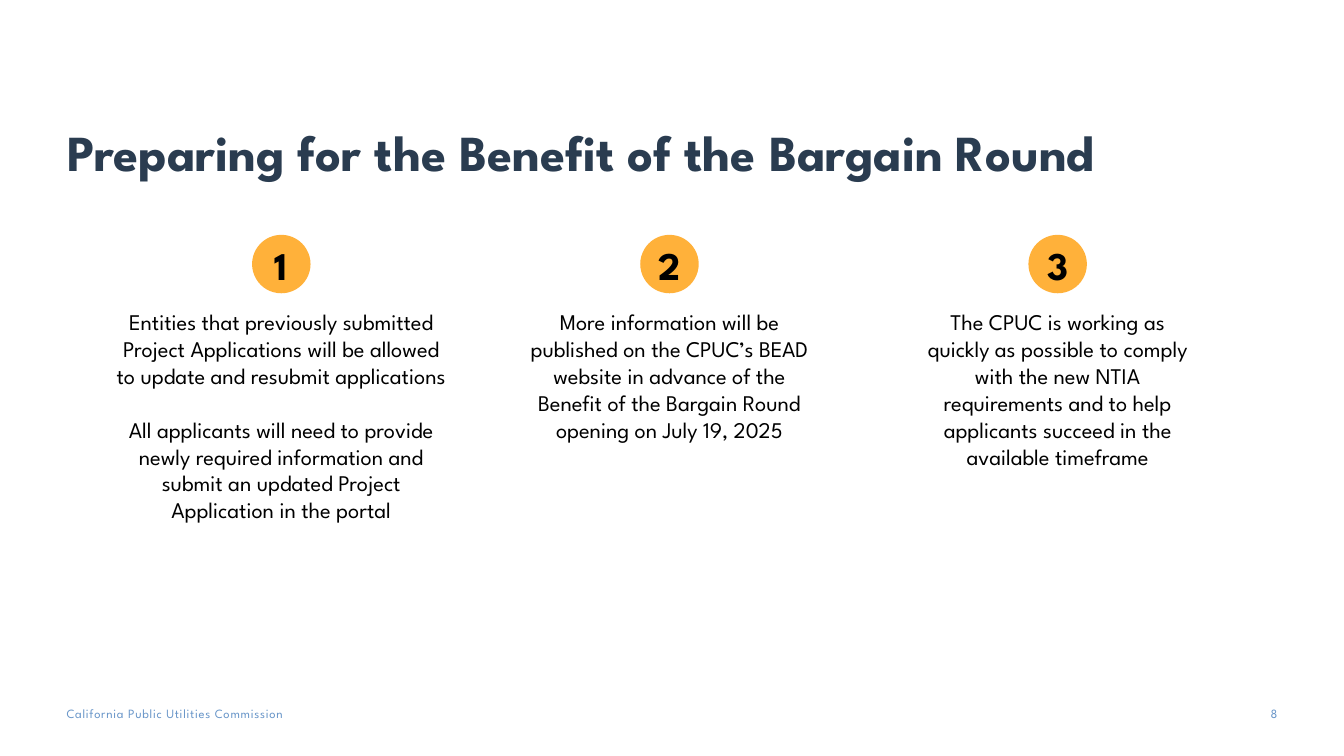
from pptx import Presentation
from pptx.dml.color import RGBColor
from pptx.enum.shapes import MSO_SHAPE
from pptx.enum.text import MSO_ANCHOR, PP_ALIGN
from pptx.util import Inches, Pt

FONT = "League Spartan"
HUES = {"navy": "2A3C50", "blue": "6996C9", "gold": "FFB13A", "black": "000000"}

deck = Presentation()
deck.slide_width, deck.slide_height = Inches(13.33), Inches(7.5)
slide = deck.slides.add_slide(deck.slide_layouts[6])


def add_text(text, place, size, hue, bold=False, align=PP_ALIGN.LEFT,
             anchor=MSO_ANCHOR.TOP, inset=(0, 0, 0, 0)):
    box = slide.shapes.add_textbox(*[Inches(n) for n in place])
    frame = box.text_frame
    frame.text = text
    frame.word_wrap = True
    frame.vertical_anchor = anchor
    (frame.margin_left, frame.margin_top,
     frame.margin_right, frame.margin_bottom) = [Inches(n) for n in inset]
    for para in frame.paragraphs:
        para.alignment = align
        for run in para.runs:
            run.font.name = FONT
            run.font.size = Pt(size)
            run.font.bold = bold
            run.font.color.rgb = RGBColor.from_string(HUES[hue])
    return frame


# Title
add_text("Preparing for the Benefit of the Bargain Round", (0.67, 0.4, 12, 1.45),
         36, "navy", bold=True, anchor=MSO_ANCHOR.BOTTOM, inset=(0, 0.05, 0.1, 0.05))

# Footer and page number
foot = add_text("California Public Utilities Commission", (0.66, 7, 3.21, 0.15), 9, "blue")
foot.paragraphs[0].runs[0].font._element.set("spc", "50")
add_text("8", (12.25, 7, 0.42, 0.2), 9, "blue", align=PP_ALIGN.RIGHT)

# Three numbered steps: text width, text height, wording
steps = [
    (3.56, 2.79, "Entities that previously submitted Project Applications will be "
     "allowed to update and resubmit applications\n"
     "All applicants will need to provide newly required information and submit "
     "an updated Project Application in the portal"),
    (3.05, 1.72, "More information will be published on the CPUC’s BEAD website in "
     "advance of the Benefit of the Bargain Round opening on July 19, 2025"),
    (2.91, 1.99, "The CPUC is working as quickly as possible to comply with the new "
     "NTIA requirements and to help applicants succeed in the available timeframe"),
]
FIRST, PITCH = 2.79, 3.85  # centre of the first column, column spacing
DOT, TOP, LABEL = 0.58, 2.33, 0.47

for col, (width, height, words) in enumerate(steps):
    mid = FIRST + col * PITCH

    # Numbered dot
    dot = slide.shapes.add_shape(MSO_SHAPE.OVAL, Inches(mid - DOT / 2), Inches(TOP),
                                 Inches(DOT), Inches(DOT))
    dot.shadow.inherit = False
    dot.fill.solid()
    dot.fill.fore_color.rgb = RGBColor.from_string(HUES["gold"])
    dot.line.fill.background()
    add_text(str(col + 1), (mid - LABEL / 2, TOP + 0.01, LABEL, DOT), 28, "black",
             bold=True, align=PP_ALIGN.CENTER, anchor=MSO_ANCHOR.MIDDLE, inset=(0.06,) * 4)

    # Step text, with one line of space between paragraphs
    body = add_text(words, (mid - width / 2, 3.01, width, height), 16, "black",
                    align=PP_ALIGN.CENTER, inset=(0.1, 0.05, 0.1, 0.05))
    for para in body.paragraphs[1:]:
        para.space_before = Pt(19.2)

deck.save("out.pptx")
